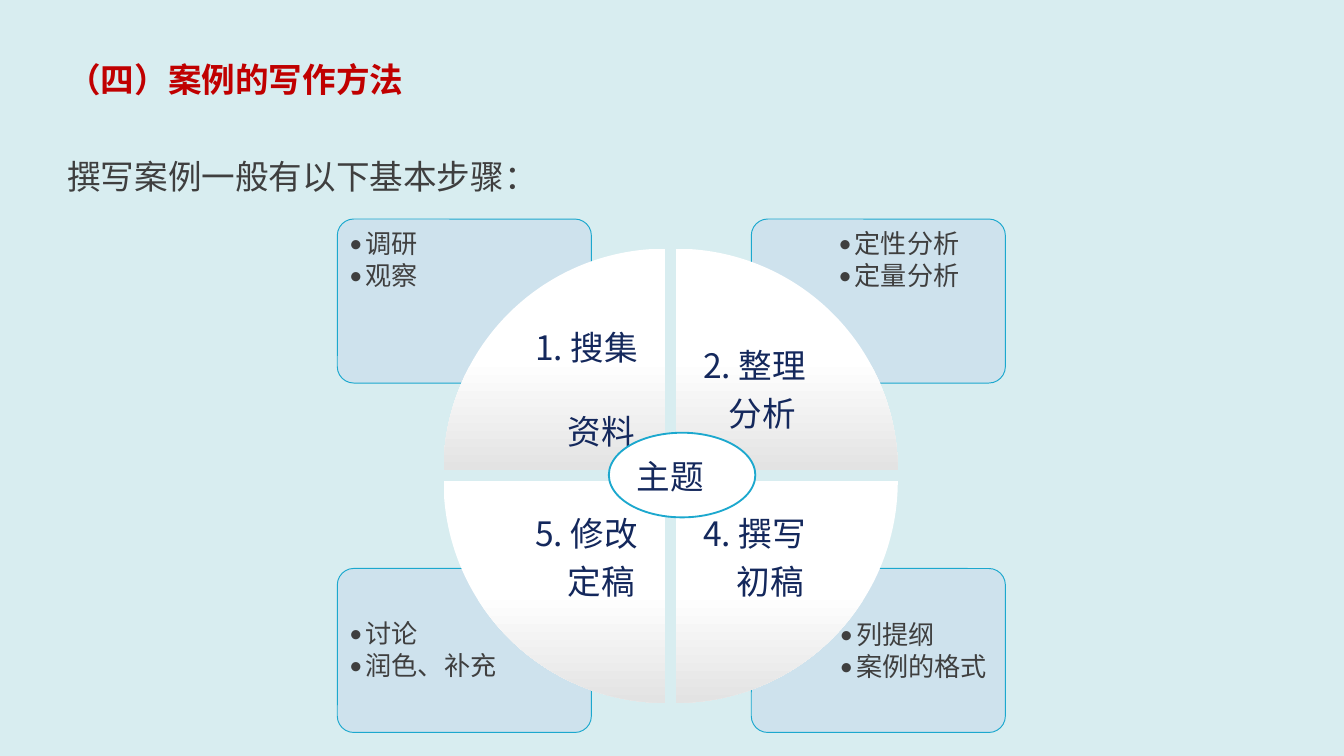
from lxml import etree
from pptx import Presentation
from pptx.dml.color import RGBColor
from pptx.enum.lang import MSO_LANGUAGE_ID
from pptx.enum.shapes import MSO_SHAPE
from pptx.enum.text import MSO_ANCHOR, PP_ALIGN
from pptx.oxml.ns import qn
from pptx.util import Inches, Pt

ROUNDED, WEDGE, OVAL = MSO_SHAPE.ROUNDED_RECTANGLE, MSO_SHAPE.PIE_WEDGE, MSO_SHAPE.OVAL
MIDDLE, TOP = MSO_ANCHOR.MIDDLE, MSO_ANCHOR.TOP
CENTER, LEFT = PP_ALIGN.CENTER, PP_ALIGN.LEFT
CHINESE = MSO_LANGUAGE_ID.SIMPLIFIED_CHINESE

THEME = {
    "background": RGBColor.from_string("D8EDF0"),
    "heading": RGBColor.from_string("C00000"),
    "body": RGBColor.from_string("3F3F3F"),
    "step": RGBColor.from_string("14285C"),
    "card": RGBColor.from_string("CDE1ED"),
    "outline": RGBColor.from_string("1CA8CE"),
    "white": RGBColor.from_string("FFFFFF"),
    "shade": RGBColor.from_string("E3E3E3"),
    "large": Pt(18),
    "small": Pt(14),
    "cjk": "Noto Sans CJK SC",
    "latin": "Calibri",
}


def style_paragraph(paragraph, font_name, size, color, bold=False):
    font = paragraph.font
    font.name, font.size, font.bold = font_name, size, bold
    font.color.rgb = color
    font.language_id = CHINESE
    east_asian = etree.SubElement(font._element, qn("a:ea"))
    east_asian.set("typeface", THEME["cjk"])


def add_text(left, top, width, height, margin, anchor):
    """Add a wrapping text box, in inches, and return its text frame."""
    box = slide.shapes.add_textbox(Inches(left), Inches(top), Inches(width), Inches(height))
    frame = box.text_frame
    frame.word_wrap, frame.vertical_anchor = True, anchor
    frame.margin_left = frame.margin_right = Inches(margin)
    frame.margin_top = frame.margin_bottom = Inches(margin)
    return frame


presentation = Presentation()
presentation.slide_width = Inches(10)
presentation.slide_height = presentation.slide_width * 9 // 16
slide = presentation.slides.add_slide(presentation.slide_layouts[5])
slide.background.fill.solid()
slide.background.fill.fore_color.rgb = THEME["background"]

# Heading and lead sentence
title = slide.shapes.title
title.left, title.top, title.width, title.height = map(Inches, (0.43, 0.21, 8.62, 1.42))
frame = title.text_frame
frame.word_wrap, frame.vertical_anchor = True, MIDDLE
frame.margin_left = frame.margin_right = Inches(0.07)
frame.margin_top = frame.margin_bottom = Inches(0.04)
frame.text = "（四）案例的写作方法\n撰写案例一般有以下基本步骤："
heading, lead = frame.paragraphs
for paragraph, color, bold in ((heading, THEME["heading"], True), (lead, THEME["body"], False)):
    paragraph.alignment, paragraph.line_spacing = LEFT, 1.2
    style_paragraph(paragraph, THEME["cjk"], THEME["large"], color, bold)
lead.space_before = Pt(26)

# Two-by-two diagram: every quadrant mirrors the others about the centre
center_x, center_y = 4.99, 3.54
card_width, card_height = 1.89, 1.22
wedge_size, label_size, half_gap = 1.65, 1.17, 0.04
card_columns, card_rows = (2.51, 5.59), (1.63, 4.23)
note_columns, note_rows = (2.54, 6.18), (1.66, 4.56)

# column, row, rotation, notes, step lines, indent of second line, gap in points
quadrants = (
    (0, 0, 0, ("调研", "观察"), ("1. 搜集", "资料"), 0.22, 25.5),
    (1, 0, 90, ("定性分析", "定量分析"), ("2. 整理", "分析"), 0.11, 6.3),
    (1, 1, 180, ("列提纲", "案例的格式"), ("4. 撰写", "初稿"), 0.23, 6.3),
    (0, 1, 270, ("讨论", "润色、补充"), ("5. 修改", "定稿"), 0.22, 6.3),
)

for column, row, _, notes, *_ in quadrants:
    card = slide.shapes.add_shape(
        ROUNDED, Inches(card_columns[column]), Inches(card_rows[row]),
        Inches(card_width), Inches(card_height))
    card.adjustments[0] = 0.1
    card.shadow.inherit = False
    card.fill.solid()
    card.fill.fore_color.rgb = THEME["card"]
    color_element = card._element.spPr.find(qn("a:solidFill"))[0]
    etree.SubElement(color_element, qn("a:alpha")).set("val", "90000")
    card.line.color.rgb, card.line.width = THEME["outline"], Pt(0.5)

    margin = 0.07 if column and row else 0.06
    frame = add_text(note_columns[column], note_rows[row], 1.27, 0.86, margin, TOP)
    frame.text = "\n".join(notes)
    for paragraph in frame.paragraphs:
        paragraph.level, paragraph.line_spacing = 1, 0.9
        paragraph.space_after = Pt(2.1)
        properties = paragraph._p.get_or_add_pPr()
        properties.set("marL", str(Inches(0.12)))
        properties.set("indent", str(-Inches(0.12)))
        etree.SubElement(properties, qn("a:buFont")).set("typeface", THEME["latin"])
        etree.SubElement(properties, qn("a:buChar")).set("char", "•")
        style_paragraph(paragraph, THEME["latin"], THEME["small"], THEME["body"])

for column, row, rotation, _, step, indent, gap in quadrants:
    (wedge_left, label_left), (wedge_top, label_top) = (
        [center + half_gap if side else center - half_gap - size
         for size in (wedge_size, label_size)]
        for center, side in ((center_x, column), (center_y, row)))
    wedge = slide.shapes.add_shape(
        WEDGE, Inches(wedge_left), Inches(wedge_top), Inches(wedge_size), Inches(wedge_size))
    wedge.rotation = rotation
    wedge.shadow.inherit = False
    wedge.line.fill.background()
    wedge.fill.gradient()
    wedge.fill.gradient_angle = 270
    for stop, position, color in zip(
            wedge.fill.gradient_stops, (0.5, 1), (THEME["white"], THEME["shade"])):
        stop.position, stop.color.rgb = position, color
    wedge._element.spPr.find(qn("a:gradFill")).set("rotWithShape", "0")

    frame = add_text(label_left, label_top, label_size, label_size, 0.14, MIDDLE)
    frame.text = "\n".join(step)
    for paragraph in frame.paragraphs:
        paragraph.alignment, paragraph.line_spacing = CENTER, 0.9
        style_paragraph(paragraph, THEME["cjk"], THEME["large"], THEME["step"])
    second_line = frame.paragraphs[1]
    second_line.space_before = Pt(gap)
    second_line._p.get_or_add_pPr().set("marL", str(Inches(indent)))

# Hub
hub = slide.shapes.add_shape(OVAL, Inches(4.53), Inches(3.22), Inches(1.09), Inches(0.63))
hub.shadow.inherit = False
hub.fill.solid()
hub.fill.fore_color.rgb = THEME["white"]
hub.line.color.rgb, hub.line.width = THEME["outline"], Pt(1)
frame = add_text(4.53, 3.34, 1.26, 0.4, 0.05, TOP)
frame.margin_left = Inches(0.21)
frame.text = "主题"
style_paragraph(frame.paragraphs[0], THEME["cjk"], THEME["large"], THEME["step"])

presentation.save("out.pptx")
